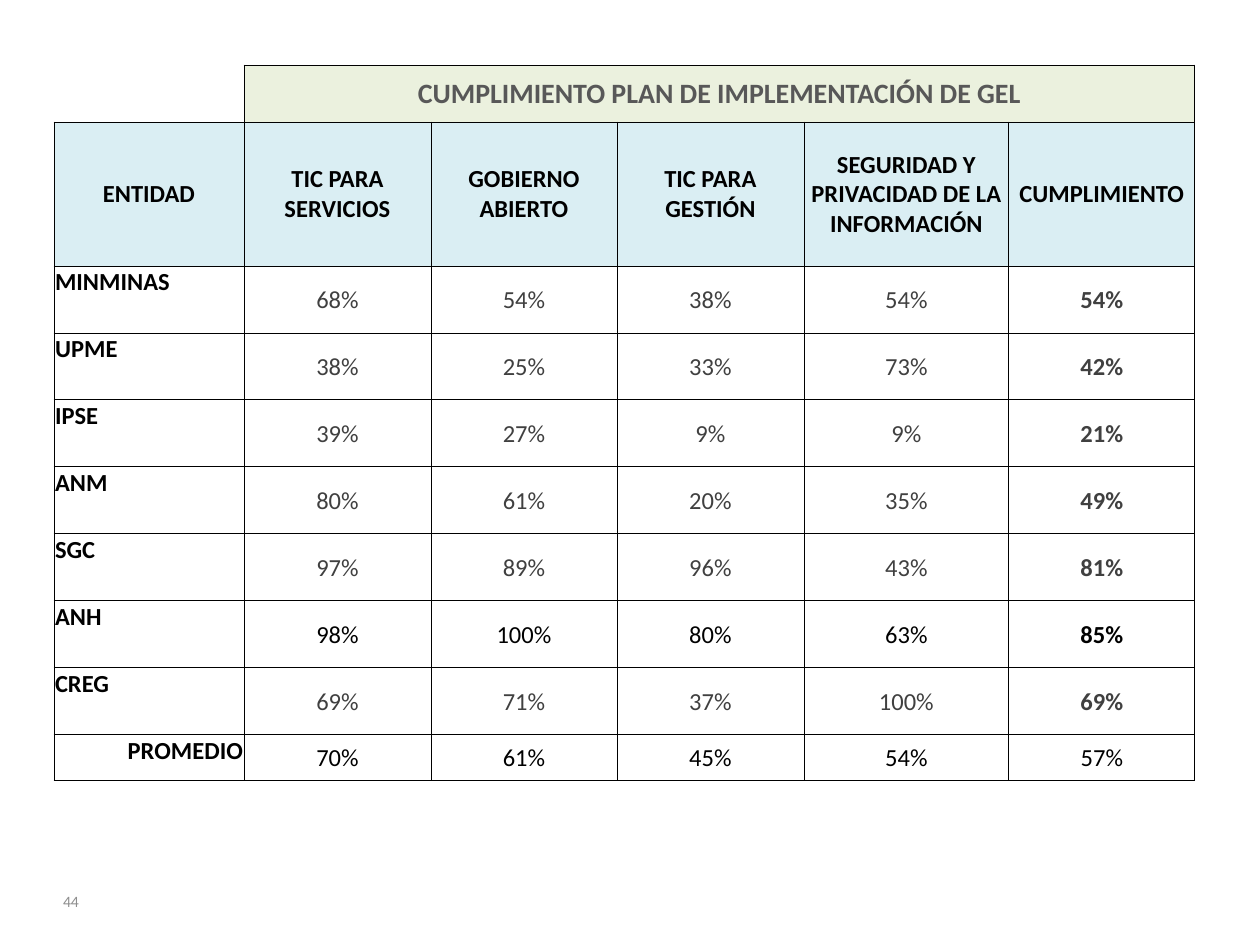
from lxml.etree import SubElement
from pptx import Presentation
from pptx.dml.color import RGBColor
from pptx.enum.text import MSO_ANCHOR, PP_ALIGN
from pptx.oxml.ns import qn
from pptx.util import Emu, Pt

BLACK = RGBColor(0x00, 0x00, 0x00)
WHITE = RGBColor(0xFF, 0xFF, 0xFF)
DARK = RGBColor(0x40, 0x40, 0x40)
GRAY = RGBColor(0x58, 0x58, 0x58)
LIGHT_GRAY = RGBColor(0x8E, 0x8E, 0x8E)
GREEN = RGBColor(0xEB, 0xF1, 0xDE)
BLUE = RGBColor(0xDA, 0xEE, 0xF3)

FONT = "Calibri"
COLS = [190, 187, 186, 187, 205, 186]
ROWS = [57, 144] + [67] * 7 + [46]
TITLE = "CUMPLIMIENTO PLAN DE IMPLEMENTACIÓN DE GEL"
HEADERS = ["ENTIDAD", "TIC PARA SERVICIOS", "GOBIERNO ABIERTO", "TIC PARA GESTIÓN",
           "SEGURIDAD Y PRIVACIDAD DE LA INFORMACIÓN", "CUMPLIMIENTO"]
ENTITIES = [
    ("MINMINAS", 68, 54, 38, 54, 54),
    ("UPME", 38, 25, 33, 73, 42),
    ("IPSE", 39, 27, 9, 9, 21),
    ("ANM", 80, 61, 20, 35, 49),
    ("SGC", 97, 89, 96, 43, 81),
    ("ANH", 98, 100, 80, 63, 85),
    ("CREG", 69, 71, 37, 100, 69),
    ("PROMEDIO", 70, 61, 45, 54, 57),
]


def px(n):
    return Emu(round(n * 914400 / 126))


def write(tf, text, size, color, bold=False, align=PP_ALIGN.LEFT):
    tf.text = text
    p = tf.paragraphs[0]
    p.alignment = align
    for r in p.runs:
        r.font.name = FONT
        r.font.size = Pt(size)
        r.font.bold = bold
        r.font.color.rgb = color


def set_borders(cell, sides):
    tcPr = cell._tc.get_or_add_tcPr()
    for side in "LRTB":
        ln = SubElement(tcPr, qn(f"a:ln{side}"), w=str(Pt(0.5)))
        if side in sides:
            fill = SubElement(ln, qn("a:solidFill"))
            SubElement(fill, qn("a:srgbClr"), val=str(BLACK))
        else:
            SubElement(ln, qn("a:noFill"))


def format_cell(cell, fill, sides="LRTB", anchor=MSO_ANCHOR.MIDDLE):
    set_borders(cell, sides)
    cell.fill.solid()
    cell.fill.fore_color.rgb = fill
    cell.margin_left = cell.margin_right = cell.margin_top = px(1)
    cell.margin_bottom = 0
    cell.vertical_anchor = anchor


def add_compliance_table(slide, x, y, w, h):
    table = slide.shapes.add_table(len(ROWS), len(COLS), px(x), px(y), px(w), px(h)).table
    table.first_row = table.horz_banding = False
    for col, width in zip(table.columns, COLS):
        col.width = px(width)
    for row, height in zip(table.rows, ROWS):
        row.height = px(height)

    format_cell(table.cell(0, 0), WHITE, "RB")
    for c in range(1, len(COLS)):
        format_cell(table.cell(0, c), GREEN)
    title = table.cell(0, 1)
    title.merge(table.cell(0, len(COLS) - 1))
    write(title.text_frame, TITLE, 16, GRAY, True, PP_ALIGN.CENTER)

    for c, header in enumerate(HEADERS):
        cell = table.cell(1, c)
        format_cell(cell, BLUE)
        write(cell.text_frame, header, 14, BLACK, True, PP_ALIGN.CENTER)

    for r, (name, *values) in enumerate(ENTITIES, 2):
        average = name == "PROMEDIO"
        cell = table.cell(r, 0)
        format_cell(cell, WHITE, anchor=MSO_ANCHOR.TOP)
        write(cell.text_frame, name, 14, BLACK, True,
              PP_ALIGN.RIGHT if average else PP_ALIGN.LEFT)
        color = BLACK if average or name == "ANH" else DARK
        for c, value in enumerate(values, 1):
            cell = table.cell(r, c)
            format_cell(cell, WHITE)
            bold = c == len(values) and not average
            write(cell.text_frame, f"{value}%", 14, color, bold, PP_ALIGN.CENTER)


def add_page_number(slide, x, y, w, h):
    tf = slide.shapes.add_textbox(px(x), px(y), px(w), px(h)).text_frame
    tf.word_wrap = True
    tf.vertical_anchor = MSO_ANCHOR.MIDDLE
    tf.margin_left = tf.margin_right = px(9)
    tf.margin_top = tf.margin_bottom = px(5)
    write(tf, "44", 9, LIGHT_GRAY)


def main():
    prs = Presentation()
    prs.slide_width, prs.slide_height = px(1260), px(945)
    slide = prs.slides.add_slide(prs.slide_layouts[6])
    add_page_number(slide, 54, 876, 294, 50)
    add_compliance_table(slide, 54, 65, sum(COLS), sum(ROWS))
    prs.save("out.pptx")


if __name__ == "__main__":
    main()
